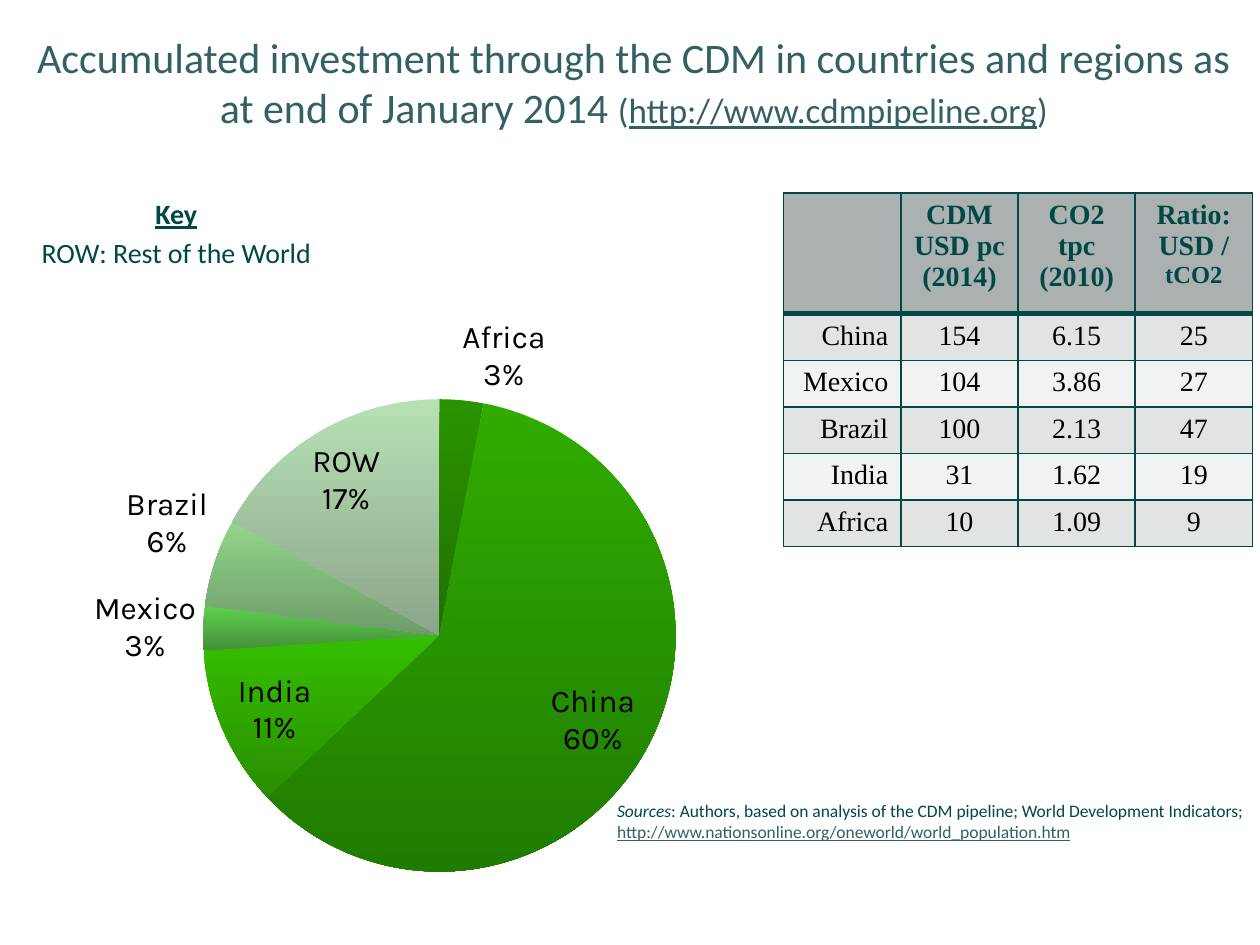
import pptx
import pptx.chart.data
import pptx.dml.color
import pptx.enum.chart
import pptx.enum.text
import pptx.oxml
import pptx.oxml.ns
import pptx.util
from pptx.util import Inches

HUES = {
    "ink": "004846", "title": "326065", "black": "000000",
    "head": "AAB1B0", "odd": "E2E4E4", "even": "F1F2F2",
}
PIE = {
    "Africa": (3, "2A9400", "217000"),
    "China": (60, "30AC00", "207C00"),
    "India": (11, "34BF00", "2A8E00"),
    "Mexico": (3, "5ECF4E", "459039"),
    "Brazil": (6, "92D58B", "6E9C69"),
    "ROW": (17, "B7E0B4", "8BA689"),
}
HEADS = [
    [],
    [[("CDM USD pc (2014)", {})]],
    [[("CO2", {})], [("tpc (2010)", {})]],
    [[("Ratio: USD /", {}), (" tCO2", {"size": 14})]],
]
ROWS = [
    ("China", "154", "6.15", "25"),
    ("Mexico", "104", "3.86", "27"),
    ("Brazil", "100", "2.13", "47"),
    ("India", "31", "1.62", "19"),
    ("Africa", "10", "1.09", "9"),
]
ALIGN = pptx.enum.text.PP_ALIGN


def rgb(code):
    return pptx.dml.color.RGBColor.from_string(code)


def put(item, vals):
    for name, val in vals.items():
        setattr(item, name, val)


def style(font, vals):
    for name, val in vals.items():
        if name == "hue":
            font.color.rgb = rgb(HUES[val])
        elif name == "size":
            font.size = pptx.util.Pt(val)
        else:
            setattr(font, name, val)


def write(frame, paras, base, align, gap=0):
    for i, runs in enumerate(paras):
        para = frame.paragraphs[0] if i == 0 else frame.add_paragraph()
        para.alignment = align
        if i and gap:
            para.space_before = pptx.util.Pt(gap)
        for text, vals in runs:
            run = para.add_run()
            run.text = text
            style(run.font, {**base, **vals})


def add_text(slide, place, paras, base, align, gap=0):
    box = slide.shapes.add_textbox(*map(Inches, place))
    put(box.text_frame, {
        "word_wrap": True,
        "auto_size": pptx.enum.text.MSO_AUTO_SIZE.SHAPE_TO_FIT_TEXT,
    })
    write(box.text_frame, paras, {"name": "Calibri", **base}, align, gap)


def node(text):
    return pptx.oxml.parse_xml(text)


def add_pie(slide, place):
    data = pptx.chart.data.CategoryChartData()
    data.categories = list(PIE)
    data.add_series("Series 1", [part[0] for part in PIE.values()])
    kind = pptx.enum.chart.XL_CHART_TYPE.PIE
    chart = slide.shapes.add_chart(kind, *map(Inches, place), data).chart
    put(chart, {"has_legend": False, "has_title": False})
    style(chart.font, {"name": "Karla", "size": 18, "hue": "black"})
    plot = chart.plots[0]
    plot.vary_by_categories = True
    series = plot.series[0]
    for i, (_, top, low) in enumerate(PIE.values()):
        fill = series.points[i].format.fill
        fill.gradient()
        fill.gradient_angle = 270
        for stop, code in zip(fill.gradient_stops, (top, low)):
            stop.color.rgb = rgb(code)
    labels = series.data_labels
    put(labels, {
        "show_value": False, "show_category_name": True,
        "show_percentage": True,
        "position": pptx.enum.chart.XL_LABEL_POSITION.BEST_FIT,
    })
    style(labels.font, {"name": "Karla", "size": 18, "hue": "black"})
    space = pptx.oxml.ns.nsdecls("c")
    last = series._element.find(".//" + pptx.oxml.ns.qn("c:showPercent"))
    mark = last.getnext()
    if mark is not None and mark.tag == pptx.oxml.ns.qn("c:showBubbleSize"):
        last = mark
    last.addnext(node(f"<c:separator {space}>\n</c:separator>"))
    area = chart._chartSpace.chart.plotArea
    for old in area.findall(pptx.oxml.ns.qn("c:layout")):
        area.remove(old)
    sizes = {"x": 0.3, "y": 0.17, "w": 0.52, "h": 0.8}
    modes = "".join(f'<c:{k}Mode val="edge"/>' for k in "xy")
    vals = "".join(f'<c:{k} val="{v}"/>' for k, v in sizes.items())
    area.insert(0, node(
        f'<c:layout {space}><c:manualLayout><c:layoutTarget val="inner"/>'
        f"{modes}{vals}</c:manualLayout></c:layout>"))


def edge(cell, low):
    props = cell._tc.get_or_add_tcPr()
    space = pptx.oxml.ns.nsdecls("a")
    for i, side in enumerate("LRTB"):
        width = pptx.util.Pt(low.get(side, 1))
        props.insert(i, node(
            f'<a:ln{side} {space} w="{width}"><a:solidFill>'
            f'<a:srgbClr val="{HUES["ink"]}"/></a:solidFill></a:ln{side}>'))


def add_grid(slide, place):
    count = len(ROWS) + 1
    grid = slide.shapes.add_table(count, 4, *map(Inches, place)).table
    for col in grid.columns:
        col.width = Inches(0.93)
    for r in range(count):
        head = r == 0
        grid.rows[r].height = Inches(0.96 if head else 0.37)
        base = {"name": "Times New Roman", "size": 16, "bold": head,
                "hue": "ink" if head else "black"}
        tone = "head" if head else "odd" if r % 2 else "even"
        for c in range(4):
            cell = grid.cell(r, c)
            cell.fill.solid()
            cell.fill.fore_color.rgb = rgb(HUES[tone])
            edge(cell, {"B": 3} if head else {"T": 3} if r == 1 else {})
            paras = HEADS[c] if head else [[(ROWS[r - 1][c], {})]]
            align = ALIGN.CENTER if head or c else ALIGN.RIGHT
            write(cell.text_frame, paras, base, align)


def main():
    deck = pptx.Presentation()
    put(deck, {"slide_width": Inches(10), "slide_height": Inches(7.5)})
    slide = deck.slides.add_slide(deck.slide_layouts[6])
    add_pie(slide, (-0.55, 2.37, 7.21, 4.69))
    add_grid(slide, (6.22, 1.53, 3.72, 2.81))
    add_text(slide, (0, 1.51, 2.8, 0.69), [
        [("Key", {"bold": True, "underline": True})],
        [("ROW: Rest of the World", {})],
    ], {"size": 16, "hue": "ink"}, ALIGN.CENTER, 3)
    add_text(slide, (4.8, 6.3, 5.43, 0.44), [[
        ("Sources", {"italic": True}),
        (": Authors, based on analysis of the CDM pipeline; "
         "World Development Indicators; ", {}),
        ("http://www.nationsonline.org/oneworld/world_population.htm",
         {"hue": "title", "underline": True}),
    ]], {"size": 10, "hue": "ink"}, ALIGN.LEFT)
    add_text(slide, (0.06, 0.2, 9.94, 0.91), [[
        ("Accumulated investment through the CDM in countries and regions "
         "as at end of January 2014 ", {"size": 24}),
        ("(", {}),
        ("http://www.cdmpipeline.org", {"underline": True}),
        (")", {}),
    ]], {"size": 20, "hue": "title"}, ALIGN.CENTER)
    deck.save("out.pptx")


if __name__ == "__main__":
    main()
